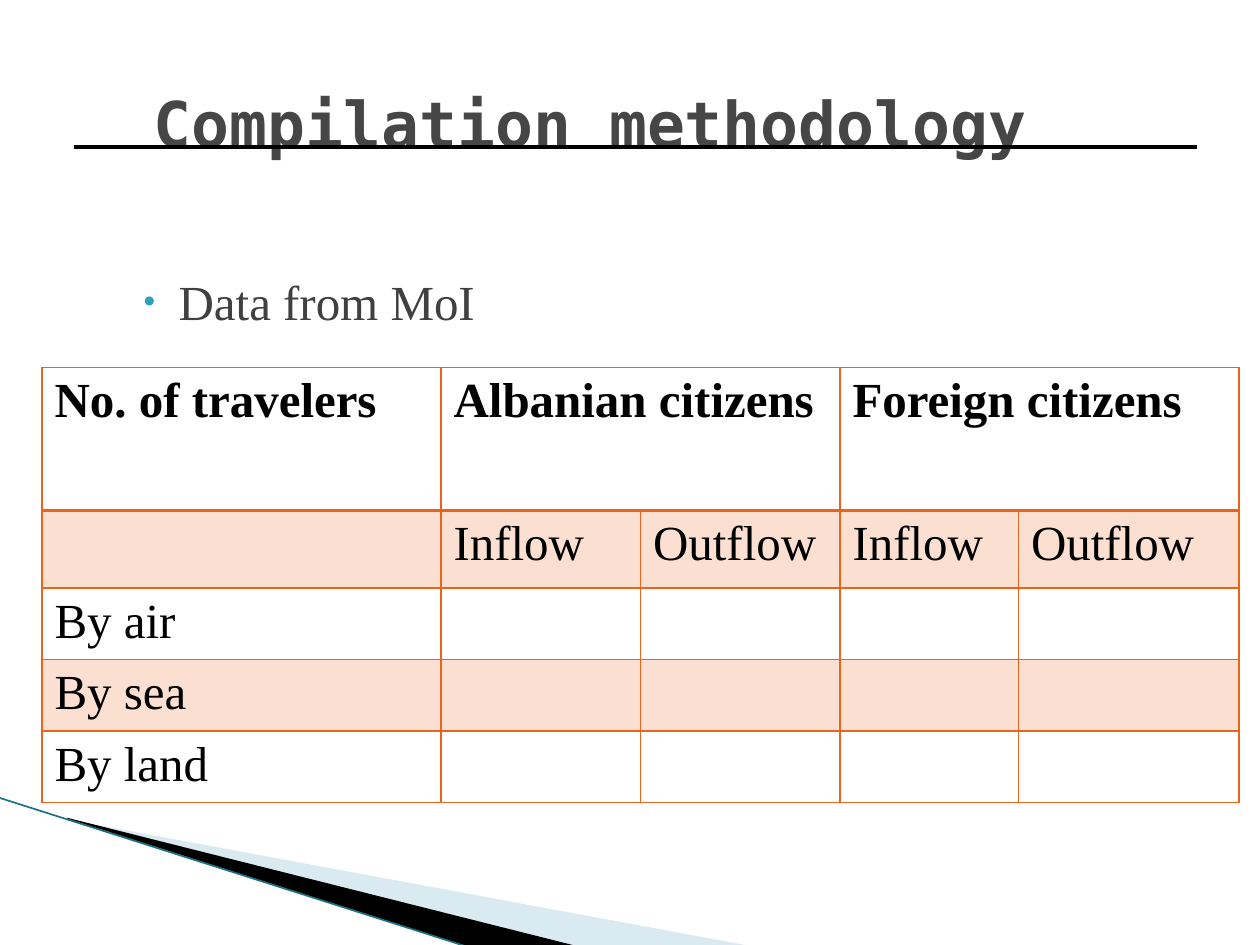
from lxml import etree
from pptx import Presentation
from pptx.dml.color import RGBColor
from pptx.enum.shapes import MSO_CONNECTOR
from pptx.enum.text import MSO_ANCHOR, PP_ALIGN
from pptx.oxml.ns import qn
from pptx.util import Pt

STRAIGHT = MSO_CONNECTOR.STRAIGHT
MIDDLE = MSO_ANCHOR.MIDDLE
LEFT = PP_ALIGN.LEFT
SERIF, MONO = "Times New Roman", "DejaVu Sans Mono"
INK, ORANGE = "000000", "EB641B"

HEAD = {"name": MONO, "size": Pt(36), "bold": True, "color": "464646"}
BODY = {"name": SERIF, "size": Pt(28), "bold": False, "color": "404040"}
CELL = {**BODY, "color": INK}
LABEL = {**CELL, "bold": True}

COLS = [228, 114, 114, 102, 126]
ROWS = [81.5, 44.6, 40.8, 40.8, 40.8]
DATA = [
    ["No. of travelers", "Albanian citizens", "", "Foreign citizens", ""],
    ["", "Inflow", "Outflow", "Inflow", "Outflow"],
    ["By air"],
    ["By sea"],
    ["By land"],
]


def rgb(code):
    return RGBColor.from_string(code)


def sub(node, tag, **attrs):
    return etree.SubElement(node, qn(tag), attrs)


def style(font, form):
    for key, value in form.items():
        if key == "color":
            font.color.rgb = rgb(value)
        else:
            setattr(font, key, value)


def paint(fill, code, alpha=100):
    """Fill with a colour at the given opacity in percent."""
    fill.solid()
    fill.fore_color.rgb = rgb(code)
    if alpha < 100:
        node = fill._xPr.find(qn("a:solidFill")).find(qn("a:srgbClr"))
        sub(node, "a:alpha", val=str(alpha * 1000))


def border(cell, code, widths):
    """Draw the left, right, top and bottom edges; width 0 hides one."""
    props = cell._tc.get_or_add_tcPr()
    for side, width in zip("LRTB", widths):
        line = sub(props, "a:ln" + side, w=str(Pt(width)))
        if width:
            sub(sub(line, "a:solidFill"), "a:srgbClr", val=code)
        else:
            sub(line, "a:noFill")


class Deck:
    def __init__(self, width, height):
        self.prs = Presentation()
        self.prs.slide_width = Pt(width)
        self.prs.slide_height = Pt(height)
        self.slide = self.prs.slides.add_slide(self.prs.slide_layouts[5])
        self.shapes = self.slide.shapes

    def title(self, text, box, inset):
        shape = self.shapes.title
        shape.left, shape.top, shape.width, shape.height = map(Pt, box)
        frame = shape.text_frame
        frame.text = text
        frame.vertical_anchor = MIDDLE
        frame.margin_left, frame.margin_top = map(Pt, inset)
        para = frame.paragraphs[0]
        para.alignment = LEFT
        style(para.runs[0].font, HEAD)

    def bullet(self, text, box):
        frame = self.shapes.add_textbox(*map(Pt, box)).text_frame
        frame.word_wrap = True
        para = frame.paragraphs[0]
        props = para._p.get_or_add_pPr()
        props.set("marL", str(Pt(28.8)))
        props.set("indent", str(-Pt(20)))
        sub(sub(props, "a:buClr"), "a:srgbClr", val="2DA2BF")
        sub(props, "a:buSzPct", val="68000")
        sub(props, "a:buFont", typeface="Arial")
        sub(props, "a:buChar", char="•")
        run = para.add_run()
        run.text = text
        style(run.font, BODY)

    def line(self, start, end, code, width):
        rule = self.shapes.add_connector(STRAIGHT, *map(Pt, start + end))
        rule.line.color.rgb = rgb(code)
        rule.line.width = Pt(width)
        sub(rule._element.spPr, "a:effectLst")

    def wedge(self, points, code, alpha=100):
        first, *rest = [(Pt(x), Pt(y)) for x, y in points]
        path = self.shapes.build_freeform(*first)
        path.add_line_segments(rest, close=True)
        shape = path.convert_to_shape()
        shape.shadow.inherit = False
        shape.line.fill.background()
        paint(shape.fill, code, alpha)

    def grid(self, left, top, cols, rows):
        """Add a plain table without banding."""
        size = map(Pt, (left, top, sum(cols), sum(rows)))
        grid = self.shapes.add_table(len(rows), len(cols), *size).table
        grid.first_row = grid.horz_banding = False
        for col, width in zip(grid.columns, cols):
            col.width = Pt(width)
        for row, height in zip(grid.rows, rows):
            row.height = Pt(height)
        return grid

    def rule(self, left, top, width, height):
        """Add a one-cell table that shows only its top edge."""
        cell = self.grid(left, top, [width], [height]).cell(0, 0)
        border(cell, INK, (0, 0, 3, 0))
        cell.fill.background()

    def table(self, left, top):
        grid = self.grid(left, top, COLS, ROWS)
        for r, texts in enumerate(DATA):
            for c in range(len(COLS)):
                cell = grid.cell(r, c)
                border(cell, ORANGE, (1, 1, 1 if r != 1 else 2, 1 if r else 2))
                if r % 2:
                    paint(cell.fill, ORANGE, 20)
                else:
                    cell.fill.background()
                if c < len(texts) and texts[c]:
                    cell.text = texts[c]
                    font = cell.text_frame.paragraphs[0].runs[0].font
                    style(font, CELL if r else LABEL)
        for c in (1, 3):
            grid.cell(0, c).merge(grid.cell(0, c + 1))


def main():
    deck = Deck(720, 540)
    deck.wedge([(39.6, 468.5), (428.4, 540.5), (328.3, 540.5), (39.6, 468)],
               "A0CBDC", 40)
    deck.wedge([(38.2, 467.3), (329, 540.5), (267.8, 541), (38.9, 468)], INK)
    deck.line((-0.7, 455.8), (267, 541), "1F7085", 0.95)
    deck.title("Compilation methodology", (36, 39.7, 648, 54), (52, 10))
    deck.rule(42, 84, 642, 41)
    deck.bullet("Data from MoI", (66.2, 151.5, 624, 40))
    deck.table(24, 210)
    deck.prs.save("out.pptx")


if __name__ == "__main__":
    main()
